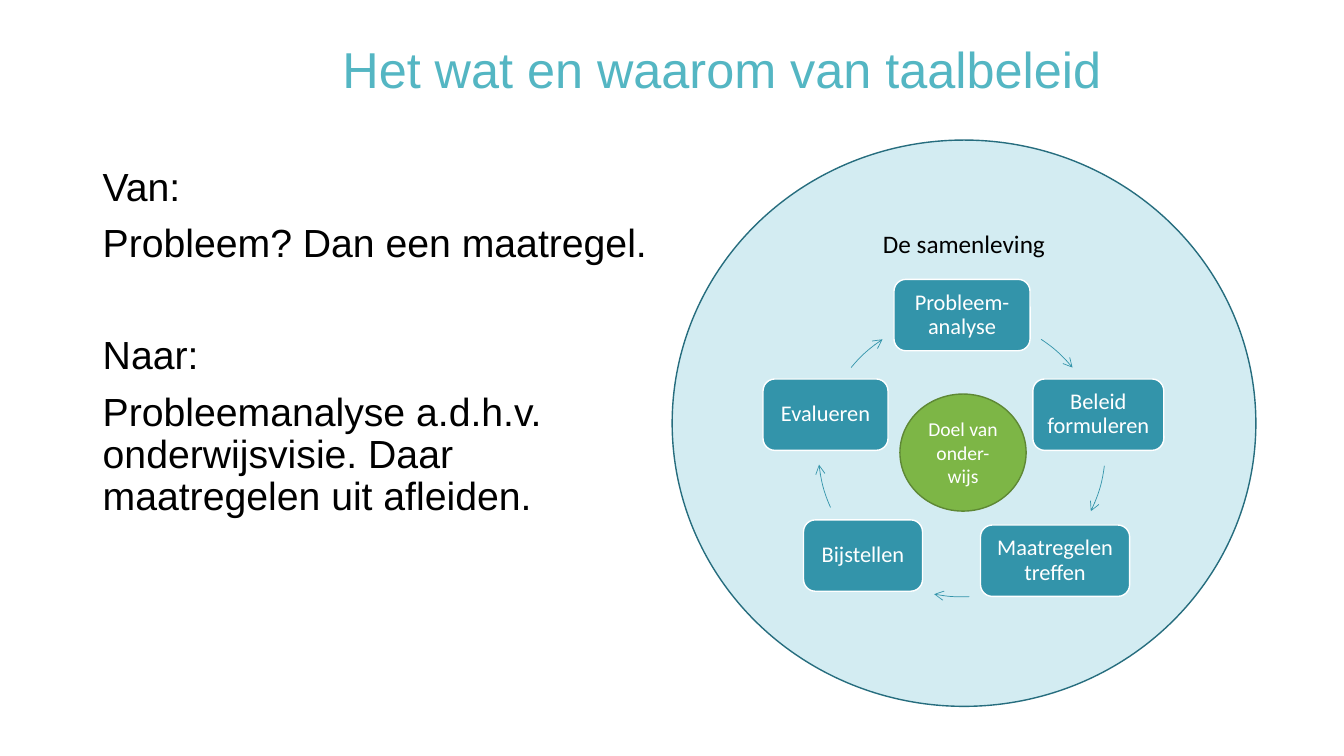
import pptx
import pptx.dml.color
import pptx.enum.shapes
import pptx.enum.text
import pptx.oxml
import pptx.oxml.ns
import pptx.util

Cm = pptx.util.Cm
Pt = pptx.util.Pt
RGBColor = pptx.dml.color.RGBColor
Shape = pptx.enum.shapes.MSO_SHAPE
Anchor = pptx.enum.text.MSO_ANCHOR
Align = pptx.enum.text.PP_ALIGN

BLACK = RGBColor(0x00, 0x00, 0x00)
WHITE = RGBColor(0xFF, 0xFF, 0xFF)
TURQUOISE = RGBColor(0x54, 0xB6, 0xC3)
TEAL = RGBColor(0x33, 0x94, 0xAA)
DARK_TEAL = RGBColor(0x26, 0x6D, 0x7E)
PALE_BLUE = RGBColor(0xD3, 0xEC, 0xF2)
GREEN = RGBColor(0x7D, 0xB6, 0x46)
DARK_GREEN = RGBColor(0x5E, 0x88, 0x35)

CYCLE_LEFT, CYCLE_DIAMETER = 20.62, 7.24
STEP_HEIGHT = 1.8

# label, left, top, width of each step
STEPS = [
    ("Probleem-analyse", 22.53, 7.04, 3.43),
    ("Beleid formuleren", 26.03, 9.55, 3.3),
    ("Maatregelen treffen", 24.71, 13.23, 3.76),
    ("Bijstellen", 20.25, 13.1, 3.0),
    ("Evalueren", 19.23, 9.55, 3.15),
]
# top of the circle, start angle and end angle of each arrow
ARROWS = [
    (7.95, 303.5, 320.4),
    (7.67, 7.1, 26.1),
    (7.8, 87, 101.1),
    (7.7, 156.1, 173.8),
    (7.95, 219.6, 236.5),
]
# text and space before of each paragraph
STATEMENTS = [
    ("Van:", 0),
    ("Probleem? Dan een maatregel.", 10),
    ("Naar:", 50),
    ("Probleemanalyse a.d.h.v. onderwijsvisie. Daar maatregelen uit afleiden.", 10),
]


class PolicySlide:
    text_font = "Arial"
    diagram_font = "Calibri"

    def __init__(self, presentation):
        self.slide = presentation.slides.add_slide(presentation.slide_layouts[6])

    def style(self, paragraph, font, size, color, spacing=None):
        paragraph.line_spacing = spacing
        for run in paragraph.runs:
            run.font.name = font
            run.font.size = Pt(size)
            run.font.color.rgb = color

    def text(self, box, paragraphs, size, color, anchor=Anchor.TOP):
        """Add a text box from (text, space before) pairs."""
        frame = self.slide.shapes.add_textbox(*map(Cm, box)).text_frame
        frame.word_wrap = True
        frame.vertical_anchor = anchor
        frame.text = "\n".join(text for text, _ in paragraphs)
        for paragraph, (_, gap) in zip(frame.paragraphs, paragraphs):
            paragraph.space_before = Pt(gap)
            self.style(paragraph, self.text_font, size, color, 0.9)

    def node(self, kind, box, label, size, color, fill, line,
             anchor=Anchor.MIDDLE, inset=0.25, spacing=None):
        """Add a filled shape with a centred label."""
        node = self.slide.shapes.add_shape(kind, *map(Cm, box))
        node.shadow.inherit = False
        node.fill.solid()
        node.fill.fore_color.rgb = fill
        node.line.color.rgb = line
        node.line.width = Pt(1)
        frame = node.text_frame
        frame.word_wrap = True
        frame.vertical_anchor = anchor
        frame.margin_left = frame.margin_right = Cm(inset)
        frame.text = label
        frame.paragraphs[0].alignment = Align.CENTER
        self.style(frame.paragraphs[0], self.diagram_font, size, color, spacing)

    def cycle_arrow(self, top, start, end):
        """Add an arc with an arrowhead, clockwise between two angles in degrees."""
        arrow = self.slide.shapes.add_shape(
            Shape.ARC, Cm(CYCLE_LEFT), Cm(top), Cm(CYCLE_DIAMETER), Cm(CYCLE_DIAMETER))
        # Adjustments count in 100000ths, angles in 60000ths of a degree
        arrow.adjustments[0] = start * 0.6
        arrow.adjustments[1] = end * 0.6
        arrow.shadow.inherit = False
        arrow.fill.background()
        arrow.line.color.rgb = TEAL
        arrow.line.width = Pt(0.5)
        line = arrow.line._get_or_add_ln()
        line.append(pptx.oxml.parse_xml(
            f'<a:tailEnd {pptx.oxml.ns.nsdecls("a")} type="arrow"/>'))


def main():
    presentation = pptx.Presentation()
    presentation.slide_width = Cm(33.87)
    presentation.slide_height = Cm(19.05)
    page = PolicySlide(presentation)

    page.node(Shape.OVAL, (16.94, 3.53, 14.71, 14.27), "De samenleving", 18,
              BLACK, PALE_BLUE, DARK_TEAL, anchor=Anchor.TOP)
    page.text((8.38, 1.07, 23.16, 1.5), [("Het wat en waarom van taalbeleid", 0)],
              36, TURQUOISE, Anchor.MIDDLE)
    page.text((2.34, 4.09, 14.71, 13.06), STATEMENTS, 28, BLACK)

    for (label, left, top, width), arrow in zip(STEPS, ARROWS):
        page.node(Shape.ROUNDED_RECTANGLE, (left, top, width, STEP_HEIGHT), label, 16,
                  WHITE, TEAL, WHITE, inset=0.18, spacing=0.9)
        page.cycle_arrow(*arrow)

    page.node(Shape.OVAL, (22.68, 9.93, 3.18, 2.95), "Doel van onder-wijs", 14,
              WHITE, GREEN, DARK_GREEN, inset=0.22)
    presentation.save("out.pptx")


if __name__ == "__main__":
    main()
